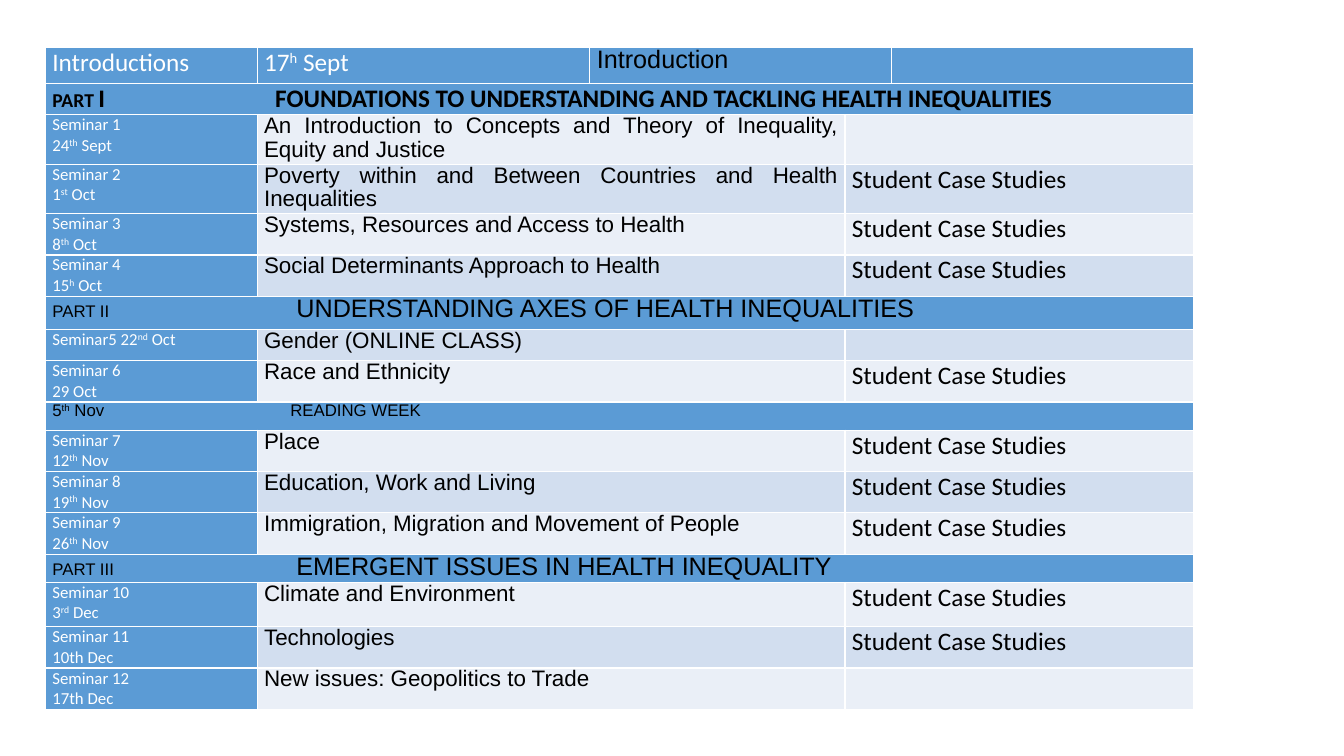
from dataclasses import dataclass
from lxml.etree import SubElement
from pptx import Presentation
from pptx.dml.color import RGBColor
from pptx.enum.text import PP_ALIGN as Align
from pptx.oxml.ns import qn
from pptx.util import Inches, Pt


@dataclass(frozen=True)
class Theme:
    blue: RGBColor = RGBColor(0x5B, 0x9B, 0xD5)
    bands: tuple = (RGBColor(0xEA, 0xEF, 0xF7), RGBColor(0xD2, 0xDE, 0xEF))
    white: RGBColor = RGBColor(0xFF, 0xFF, 0xFF)
    black: RGBColor = RGBColor(0, 0, 0)
    sans: str = "Arial"
    body: str = "Calibri"
    large: Pt = Pt(18)
    topic: Pt = Pt(16)
    medium: Pt = Pt(14)
    small: Pt = Pt(12)


theme = Theme()


def add_spans(para, text, size=None):
    for index, piece in enumerate(text.split("^")):
        span = para.add_run()
        span.text = piece
        if size:
            span.font.size = size
        if index % 2:
            span._r.get_or_add_rPr().set("baseline", "30000")


def write(cell, text, size, face, color, align=Align.JUSTIFY):
    frame = cell.text_frame
    for index, line in enumerate(text.split("\n")):
        para = frame.add_paragraph() if index else frame.paragraphs[0]
        para.alignment = align
        para.font.size, para.font.name, para.font.bold = size, face, False
        para.font.color.rgb = color
        if face == theme.sans:
            para.line_spacing = 0.95
        if line:
            add_spans(para, line)
    return frame.paragraphs[0]


CASES = "Student Case Studies"
column_widths = [2.1, 3.3, 2.53, 0.46, 3]
row_heights = [0.36, 0.31, 0.49, 0.49, 0.41, 0.41, 0.33, 0.31, 0.41,
               0.28, 0.41, 0.41, 0.41, 0.28, 0.44, 0.41, 0.41]
headings = ["Introductions", "17^h^ Sept", "Introduction", "", ""]
sections = {
    1: ("", "FOUNDATIONS TO UNDERSTANDING AND TACKLING HEALTH INEQUALITIES", 2.21, theme.large),
    6: ("PART II", "UNDERSTANDING AXES OF HEALTH INEQUALITIES", 2.42, theme.large),
    9: ("5^th^ Nov", "READING WEEK", 2.36, theme.small),
    13: ("PART III", "EMERGENT ISSUES IN HEALTH INEQUALITY", 2.42, theme.large),
}
seminars = {
    2: ("Seminar 1\n24^th^ Sept",
        "An Introduction to Concepts and Theory of Inequality, Equity and Justice", ""),
    3: ("Seminar 2\n1^st^ Oct",
        "Poverty within and Between Countries and Health Inequalities", CASES),
    4: ("Seminar 3\n8^th^ Oct", "Systems, Resources and Access to Health", CASES),
    5: ("Seminar 4\n15^h^ Oct", "Social Determinants Approach to Health", CASES),
    7: ("Seminar5 22^nd^ Oct", "Gender (ONLINE CLASS)", ""),
    8: ("Seminar 6\n29 Oct", "Race and Ethnicity", CASES),
    10: ("Seminar 7\n12^th^ Nov", "Place", CASES),
    11: ("Seminar 8\n19^th^ Nov", "Education, Work and Living", CASES),
    12: ("Seminar 9\n26^th^ Nov", "Immigration, Migration and Movement of People", CASES),
    14: ("Seminar 10\n3^rd^ Dec", "Climate and Environment", CASES),
    15: ("Seminar 11\n10th Dec", "Technologies", CASES),
    16: ("Seminar 12\n17th Dec", "New issues: Geopolitics to Trade", ""),
}

deck = Presentation()
deck.slide_width, deck.slide_height = Inches(13.33), Inches(7.5)
page = deck.slides.add_slide(deck.slide_layouts[6])
schedule = page.shapes.add_table(
    len(row_heights), len(column_widths), Inches(0.45), Inches(0.47),
    Inches(sum(column_widths)), Inches(sum(row_heights))).table
for column, width in zip(schedule.columns, column_widths):
    column.width = Inches(width)
for row, height in zip(schedule.rows, row_heights):
    row.height = Inches(height)

for row_index, row in enumerate(schedule.rows):
    for column_index, cell in enumerate(row.cells):
        cell.margin_left = cell.margin_right = Inches(0.07)
        cell.margin_top = cell.margin_bottom = 0
        cell.fill.solid()
        banded = row_index in seminars and column_index > 0
        cell.fill.fore_color.rgb = theme.bands[row_index % 2] if banded else theme.blue

schedule.cell(0, 2).merge(schedule.cell(0, 3))
for column_index, heading in enumerate(headings):
    face, color = (theme.sans, theme.black) if column_index == 2 else (theme.body, theme.white)
    write(schedule.cell(0, column_index), heading, theme.large, face, color)

for row_index, (label, title, indent, title_size) in sections.items():
    first = schedule.cell(row_index, 0)
    first.merge(schedule.cell(row_index, 4))
    opening = row_index == 1
    face = theme.body if opening else theme.sans
    para = write(first, label, theme.small, face, theme.black, Align.LEFT)
    if opening:
        para.font.bold = True
        add_spans(para, "PART ", theme.medium)
        add_spans(para, "I", theme.large)
    add_spans(para, "\t" + title, title_size)
    properties = para._p.get_or_add_pPr()
    tabs = SubElement(properties, qn("a:tabLst"))
    SubElement(tabs, qn("a:tab"), pos=str(Inches(indent)), algn="l")
    properties.find(qn("a:defRPr")).addprevious(tabs)

for row_index, (date, topic, activity) in seminars.items():
    for column_index in (1, 3):
        schedule.cell(row_index, column_index).merge(schedule.cell(row_index, column_index + 1))
    write(schedule.cell(row_index, 0), date, theme.small, theme.body, theme.white)
    write(schedule.cell(row_index, 1), topic, theme.topic, theme.sans, theme.black)
    write(schedule.cell(row_index, 3), activity, theme.large, theme.body, theme.black, Align.LEFT)

deck.save("out.pptx")
